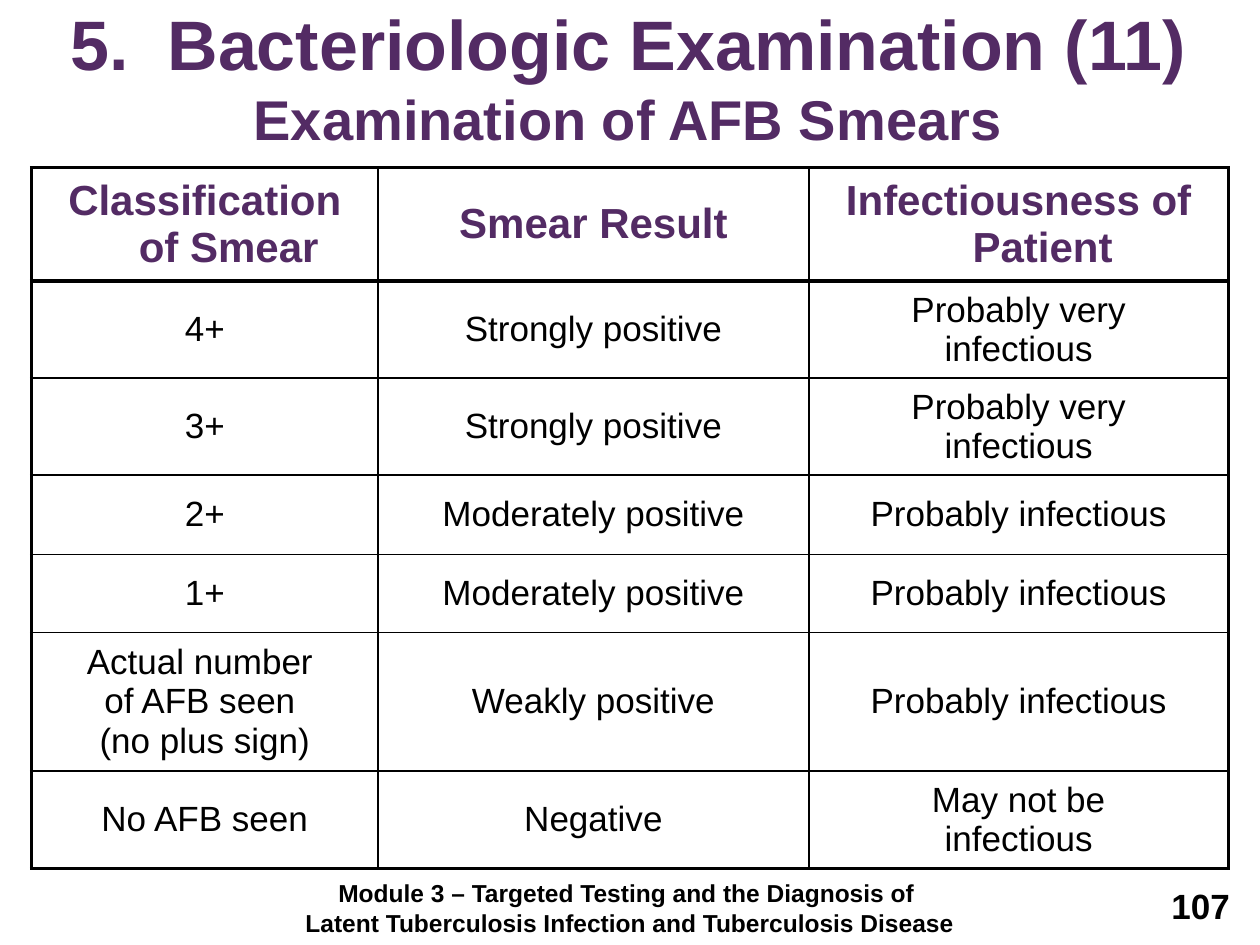
from lxml.etree import SubElement
from pptx import Presentation
from pptx.dml.color import RGBColor
from pptx.enum.text import MSO_ANCHOR, PP_ALIGN
from pptx.oxml.ns import qn
from pptx.util import Inches, Pt

COLORS = {"heading": "532B64", "text": "000000", "border": "000000"}
FONT = "Arial"
COLUMN_WIDTHS = [2.75, 3.42, 3.33]
ROW_HEIGHTS = [0.9, 0.77, 0.77, 0.63, 0.62, 1.1, 0.77]
SMEAR_ROWS = [
    ["Classification of Smear", "Smear Result", "Infectiousness of Patient"],
    ["4+", "Strongly positive", "Probably very\ninfectious"],
    ["3+", "Strongly positive", "Probably very\ninfectious"],
    ["2+", "Moderately positive", "Probably infectious"],
    ["1+", "Moderately positive", "Probably infectious"],
    ["Actual number \nof AFB seen \n(no plus sign)", "Weakly positive", "Probably infectious"],
    ["No AFB seen", "Negative", "May not be\ninfectious"],
]


def add_run(paragraph, text, size, color, bold=True):
    run = paragraph.add_run()
    run.text = text
    run.font.name = FONT
    run.font.size = Pt(size)
    run.font.bold = bold
    run.font.color.rgb = RGBColor.from_string(COLORS[color])


def add_text_frame(slide, left, top, width, height, anchor=MSO_ANCHOR.TOP):
    shape = slide.shapes.add_textbox(Inches(left), Inches(top), Inches(width), Inches(height))
    shape.text_frame.word_wrap = True
    shape.text_frame.vertical_anchor = anchor
    return shape.text_frame


def add_title(slide, left, top, width, height):
    frame = add_text_frame(slide, left, top, width, height, MSO_ANCHOR.BOTTOM)
    paragraph = frame.paragraphs[0]
    paragraph.alignment = PP_ALIGN.CENTER
    add_run(paragraph, "5.  Bacteriologic Examination (11)", 40, "heading")
    paragraph.add_line_break()
    add_run(paragraph, "Examination of AFB Smears", 32, "heading")


def set_borders(cell, widths):
    properties = cell._tc.get_or_add_tcPr()
    for index, (side, width) in enumerate(widths.items()):
        line = properties.makeelement(qn(f"a:{side}"), {"w": str(Pt(width))})
        properties.insert(index, line)
        fill = SubElement(line, qn("a:solidFill"))
        SubElement(fill, qn("a:srgbClr"), val=COLORS["border"])


def fill_cell(cell, text, is_header):
    cell.fill.background()
    cell.vertical_anchor = MSO_ANCHOR.MIDDLE
    for index, line in enumerate(text.split("\n")):
        frame = cell.text_frame
        paragraph = frame.add_paragraph() if index else frame.paragraphs[0]
        paragraph.alignment = PP_ALIGN.CENTER
        properties = paragraph._p.get_or_add_pPr()
        properties.set("marL", str(Inches(0.38)))
        properties.set("indent", str(Inches(-0.38)))
        if is_header:
            add_run(paragraph, line, 24, "heading")
        else:
            add_run(paragraph, line, 20, "text", bold=False)


def add_smear_table(slide, left, top, width, height):
    last_row, last_column = len(ROW_HEIGHTS) - 1, len(COLUMN_WIDTHS) - 1
    table = slide.shapes.add_table(
        len(ROW_HEIGHTS), len(COLUMN_WIDTHS),
        Inches(left), Inches(top), Inches(width), Inches(height),
    ).table
    table.horz_banding = False
    for column, column_width in zip(table.columns, COLUMN_WIDTHS):
        column.width = Inches(column_width)
    for row, row_height in zip(table.rows, ROW_HEIGHTS):
        row.height = Inches(row_height)
    for row_index, row_texts in enumerate(SMEAR_ROWS):
        for column_index, text in enumerate(row_texts):
            cell = table.cell(row_index, column_index)
            fill_cell(cell, text, row_index == 0)
            set_borders(cell, {
                "lnL": 2 if column_index == 0 else 1,
                "lnR": 2 if column_index == last_column else 1,
                "lnT": 2 if row_index <= 1 else 1,
                "lnB": 2 if row_index in (0, last_row) else 1,
            })


def add_footer(slide, left, top, width, height):
    frame = add_text_frame(slide, left, top, width, height)
    lines = [
        "Module 3 – Targeted Testing and the Diagnosis of ",
        "Latent Tuberculosis Infection and Tuberculosis Disease",
    ]
    for index, line in enumerate(lines):
        paragraph = frame.add_paragraph() if index else frame.paragraphs[0]
        paragraph.alignment = PP_ALIGN.CENTER
        add_run(paragraph, line, 14, "text")


def add_page_number(slide, left, top, width, height):
    paragraph = add_text_frame(slide, left, top, width, height).paragraphs[0]
    paragraph.alignment = PP_ALIGN.RIGHT
    add_run(paragraph, "107", 20, "text")


def main():
    presentation = Presentation()
    presentation.slide_width = Inches(10)
    presentation.slide_height = Inches(7.5)
    slide = presentation.slides.add_slide(presentation.slide_layouts[6])
    add_footer(slide, 0.25, 6.92, 9.5, 0.52)
    add_page_number(slide, 7.53, 6.97, 2.33, 0.52)
    add_title(slide, 0.3, 0, 9.37, 1.25)
    add_smear_table(slide, 0.25, 1.33, 9.5, 5.55)
    presentation.save("out.pptx")


if __name__ == "__main__":
    main()
